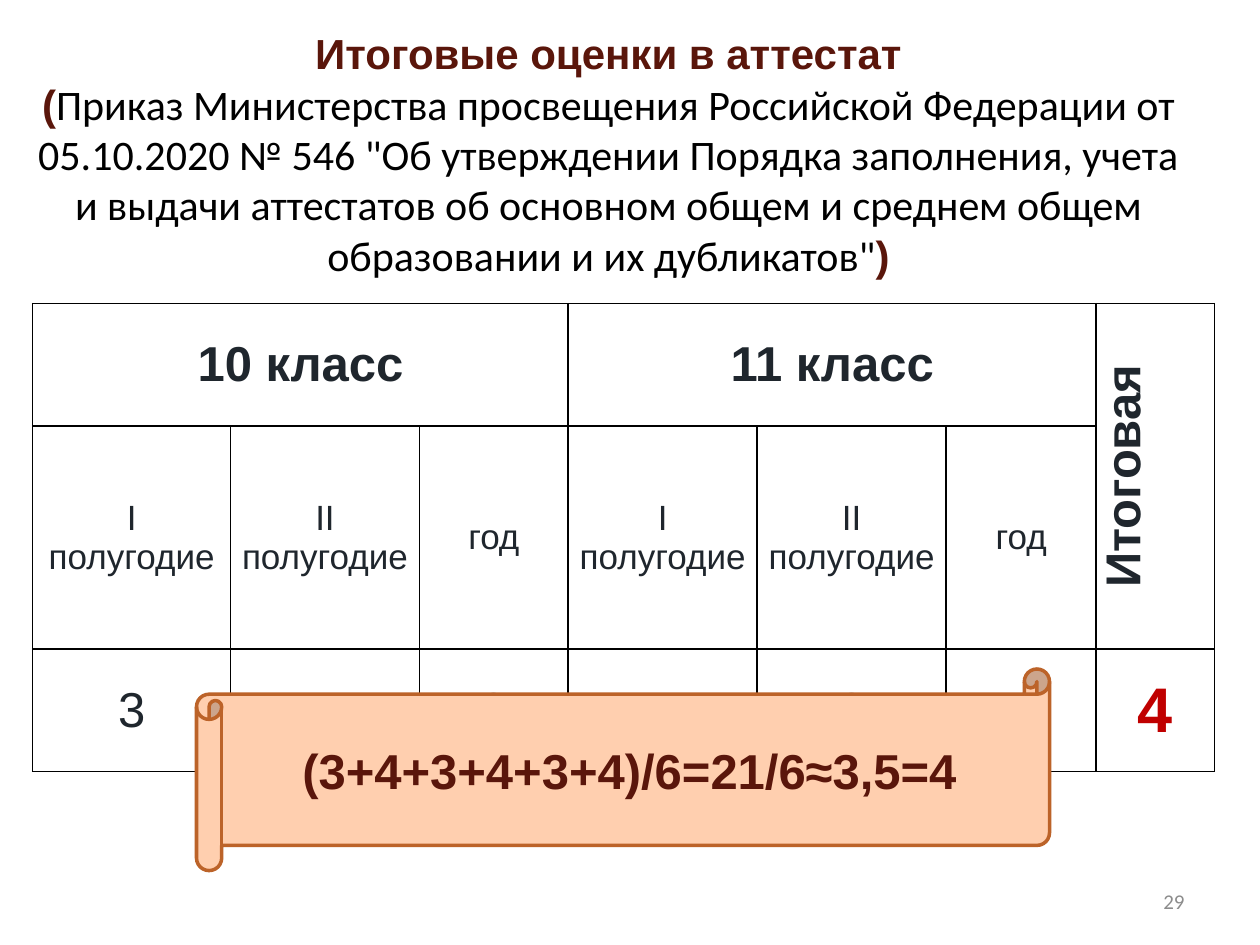
from dataclasses import dataclass

from lxml.etree import SubElement
from pptx import Presentation
from pptx.dml.color import RGBColor
from pptx.enum.shapes import MSO_SHAPE
from pptx.enum.text import MSO_ANCHOR, PP_ALIGN
from pptx.oxml import parse_xml
from pptx.oxml.ns import nsdecls, qn
from pptx.util import Inches, Pt


@dataclass(frozen=True)
class Style:
    size: int
    color: str
    bold: bool = False
    face: str = "Arial"


@dataclass(frozen=True)
class Theme:
    title: Style = Style(24, "5A160B", True)
    decree: Style = Style(24, "000000", face="Calibri")
    heading: Style = Style(28, "1F262D", True)
    period: Style = Style(20, "1F262D")
    mark: Style = Style(28, "1F262D")
    final_mark: Style = Style(36, "C00000", True)
    formula: Style = Style(28, "5A160B", True)
    page: Style = Style(12, "8C8C8C", face="Calibri")
    grid: str = "000000"
    scroll_fill: str = "FFCFAF"
    scroll_line: str = "BC6329"


@dataclass(frozen=True)
class GradeCell:
    row: int
    column: int
    text: str
    style: Style
    rows: int = 1
    columns: int = 1
    vertical: bool = False


THEME = Theme()
COLUMN_WIDTHS = (1.57, 1.5, 1.18, 1.5, 1.5, 1.19, 0.94)
ROW_HEIGHTS = (0.97, 0.92, 0.97)
PERIODS = ("I полугодие", "II полугодие", "год") * 2
MARKS = "343434"
DECREE = (
    "Приказ Министерства просвещения Российской Федерации от 05.10.2020 № 546 "
    '"Об утверждении Порядка заполнения, учета и выдачи аттестатов об основном '
    'общем и среднем общем образовании и их дубликатов"'
)
GRADES = (
    GradeCell(0, 0, "10 класс", THEME.heading, columns=3),
    GradeCell(0, 3, "11 класс", THEME.heading, columns=3),
    GradeCell(0, 6, "Итоговая", THEME.heading, rows=2, vertical=True),
    *(GradeCell(1, i, period, THEME.period) for i, period in enumerate(PERIODS)),
    *(GradeCell(2, i, mark, THEME.mark) for i, mark in enumerate(MARKS)),
    GradeCell(2, 6, "4", THEME.final_mark),
)


def apply_style(font, style: Style) -> None:
    font.name, font.size, font.bold = style.face, Pt(style.size), style.bold
    font.color.rgb = RGBColor.from_string(style.color)


def write(frame, text: str, style: Style, align=PP_ALIGN.CENTER) -> None:
    paragraph = frame.paragraphs[0]
    paragraph.text, paragraph.alignment = text, align
    apply_style(paragraph.font, style)


def add_box(slide, left: float, top: float, width: float, height: float):
    box = slide.shapes.add_textbox(Inches(left), Inches(top), Inches(width), Inches(height))
    box.text_frame.word_wrap = True
    box.text_frame.vertical_anchor = MSO_ANCHOR.MIDDLE
    return box.text_frame


def add_title(slide) -> None:
    paragraph = add_box(slide, 0.18, 0.52, 9.3, 1.4).paragraphs[0]
    paragraph.alignment = PP_ALIGN.CENTER
    for text, style in (
        ("Итоговые оценки в аттестат", THEME.title),
        ("\n", THEME.title),
        ("(", THEME.title),
        (DECREE, THEME.decree),
        (")", THEME.title),
    ):
        if text == "\n":
            paragraph.add_line_break()
            continue
        run = paragraph.add_run()
        run.text = text
        apply_style(run.font, style)


def format_cell(cell) -> None:
    cell.margin_left = cell.margin_right = Inches(0.07)
    cell.margin_top = cell.margin_bottom = 0
    cell.fill.background()
    properties = cell._tc.get_or_add_tcPr()
    for index, side in enumerate(("lnL", "lnR", "lnT", "lnB")):
        border = parse_xml(
            f'<a:{side} {nsdecls("a")} w="{Pt(1)}"><a:solidFill>'
            f'<a:srgbClr val="{THEME.grid}"/></a:solidFill></a:{side}>'
        )
        properties.insert(index, border)


def add_grades(slide) -> None:
    frame = slide.shapes.add_table(
        len(ROW_HEIGHTS), len(COLUMN_WIDTHS), Inches(0.26), Inches(2.41),
        Inches(sum(COLUMN_WIDTHS)), Inches(sum(ROW_HEIGHTS)),
    )
    table = frame.table
    table.first_row = table.horz_banding = False
    for column, width in zip(table.columns, COLUMN_WIDTHS):
        column.width = Inches(width)
    for row, height in zip(table.rows, ROW_HEIGHTS):
        row.height = Inches(height)
    for cell in table.iter_cells():
        format_cell(cell)
    for grade in GRADES:
        cell = table.cell(grade.row, grade.column)
        if grade.rows * grade.columns > 1:
            cell.merge(table.cell(grade.row + grade.rows - 1, grade.column + grade.columns - 1))
        if grade.vertical:
            cell._tc.get_or_add_tcPr().set("vert", "vert270")
        else:
            cell.vertical_anchor = MSO_ANCHOR.MIDDLE
        write(cell.text_frame, grade.text, grade.style)


def add_formula(slide) -> None:
    scroll = slide.shapes.add_shape(
        MSO_SHAPE.HORIZONTAL_SCROLL, Inches(1.56), Inches(5.31), Inches(6.77), Inches(1.6)
    )
    scroll.shadow.inherit = False
    scroll.fill.solid()
    scroll.fill.fore_color.rgb = RGBColor.from_string(THEME.scroll_fill)
    scroll.line.color.rgb = RGBColor.from_string(THEME.scroll_line)
    scroll.line.width = Pt(2)
    scroll.text_frame.word_wrap = True
    scroll.text_frame.vertical_anchor = MSO_ANCHOR.MIDDLE
    write(scroll.text_frame, "(3+4+3+4+3+4)/6=21/6≈3,5=4", THEME.formula)


def main() -> None:
    """Build the slide on final certificate grades."""
    deck = Presentation()
    deck.slide_width, deck.slide_height = Inches(10), Inches(7.5)
    slide = deck.slides.add_slide(deck.slide_layouts[6])
    add_title(slide)
    add_grades(slide)
    write(add_box(slide, 7.17, 6.95, 2.33, 0.4), "29", THEME.page, PP_ALIGN.RIGHT)
    add_formula(slide)
    deck.save("out.pptx")


if __name__ == "__main__":
    main()
